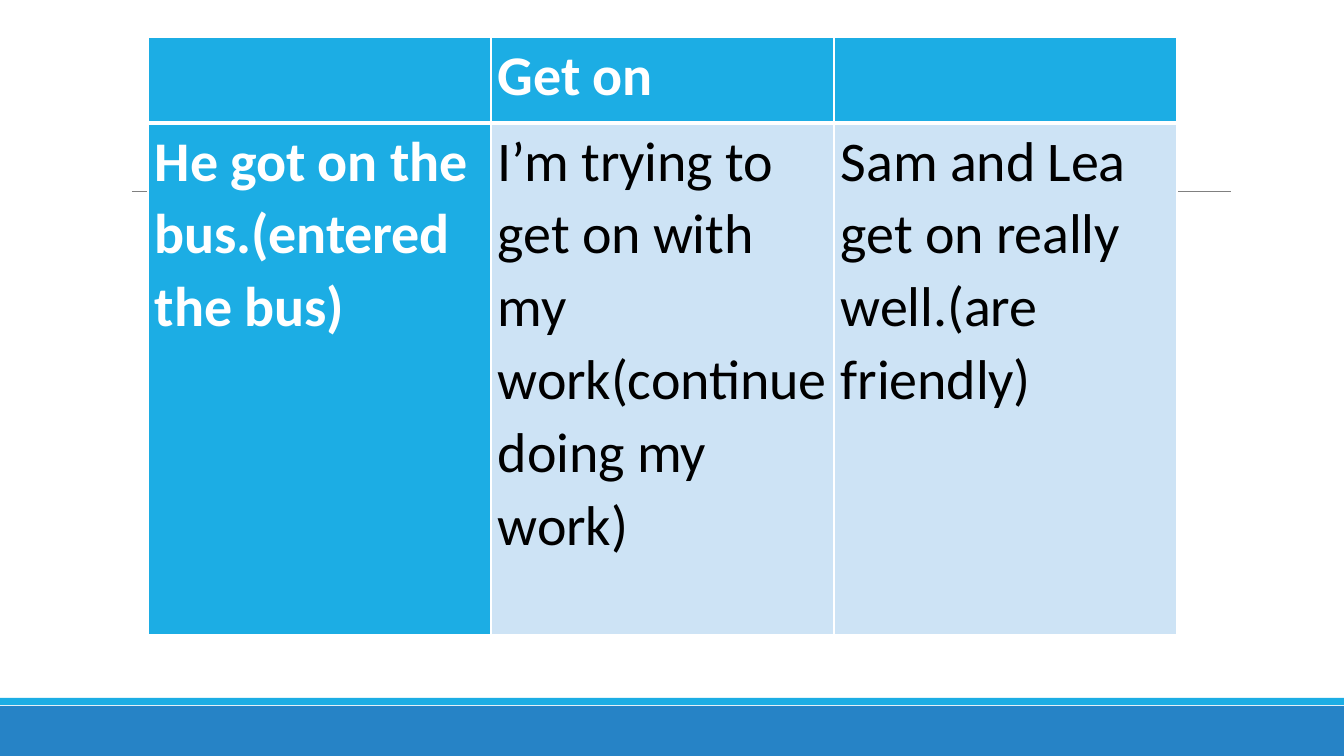
from lxml.etree import SubElement
from pptx import Presentation
from pptx.dml.color import RGBColor
from pptx.enum.shapes import MSO_CONNECTOR, MSO_SHAPE
from pptx.oxml.ns import qn
from pptx.util import Pt

PX = 914400 / 100.8
WIDTH, HEIGHT = 1344, 756
COLORS = {"footer": "2683C6", "accent": "1CADE4", "rule": "808080",
          "pale": "CDE3F5", "light": "FFFFFF", "dark": "000000"}
ROWS = [
    ["", "Get on", ""],
    ["He got on the bus.(entered the bus)",
     "I’m trying to get on with my work(continue doing my work)",
     "Sam and Lea get on really well.(are friendly)"],
]


def px(n):
    return round(n * PX)


def rgb(name):
    return RGBColor.from_string(COLORS[name])


def add_band(slide, x, y, w, h, color):
    sp = slide.shapes.add_shape(MSO_SHAPE.RECTANGLE, px(x), px(y), px(w), px(h))
    sp.shadow.inherit = False
    sp.fill.solid()
    sp.fill.fore_color.rgb = rgb(color)
    sp.line.fill.background()


def add_backdrop(slide, x, y, w, h):
    add_band(slide, x, y + h - 50, w, 50, "footer")
    add_band(slide, x, y + h - 58, w, 7, "accent")
    rule = slide.shapes.add_connector(MSO_CONNECTOR.STRAIGHT, px(x + 132), px(y + 191),
                                      px(x + w - 113), px(y + 191))
    rule.line.color.rgb = rgb("rule")
    rule.line.width = Pt(0.5)
    SubElement(rule._element.spPr, qn("a:effectLst"))


def set_borders(cell, **widths):
    """Draw white borders; widths are points by side, in the order L, R, T, B."""
    tc_pr = cell._tc.get_or_add_tcPr()
    for side, width in widths.items():
        ln = SubElement(tc_pr, qn(f"a:ln{side}"), w=str(Pt(width)))
        fill = SubElement(ln, qn("a:solidFill"))
        SubElement(fill, qn("a:srgbClr"), val=COLORS["light"])


def format_cell(cell, text, is_header, is_first_col):
    strong = is_header or is_first_col
    cell.margin_left = cell.margin_right = px(7)
    cell.margin_top = cell.margin_bottom = 0
    set_borders(cell, L=1, R=1, T=1 if is_header else 3, B=3 if is_header else 1)
    cell.fill.solid()
    cell.fill.fore_color.rgb = rgb("accent" if strong else "pale")
    if not text:
        return
    p = cell.text_frame.paragraphs[0]
    p.text = text
    p.line_spacing = 1.07
    r = p.runs[0]
    r.font.name = "Calibri"
    r.font.size = Pt(40)
    r.font.bold = strong
    r.font.color.rgb = rgb("light" if strong else "dark")
    r._r.get_or_add_rPr().set("spc", "-10")


def add_meanings_table(slide, x, y, w, h, header_h):
    frame = slide.shapes.add_table(len(ROWS), len(ROWS[0]), px(x), px(y), px(w), px(h))
    table = frame.table
    for col in table.columns:
        col.width = px(w / len(ROWS[0]))
    table.rows[0].height = px(header_h)
    table.rows[1].height = px(h - header_h)
    for i, row in enumerate(ROWS):
        for j, text in enumerate(row):
            format_cell(table.cell(i, j), text, i == 0, j == 0)


def main():
    prs = Presentation()
    prs.slide_width, prs.slide_height = px(WIDTH), px(HEIGHT)
    slide = prs.slides.add_slide(prs.slide_layouts[6])
    add_backdrop(slide, 0, 0, WIDTH, HEIGHT)
    add_meanings_table(slide, 148, 37, 1029, 598, 86)
    prs.save("out.pptx")


if __name__ == "__main__":
    main()
